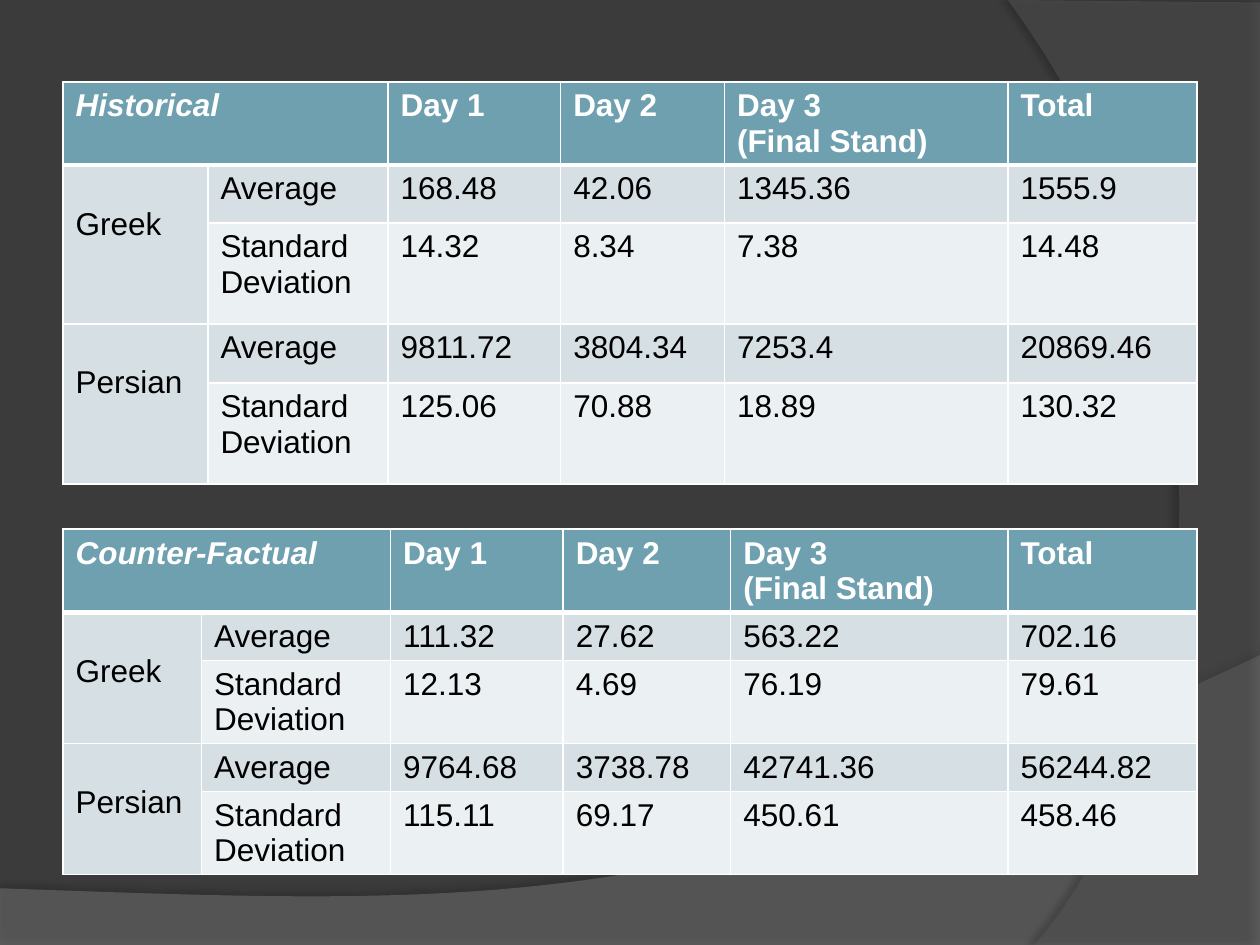
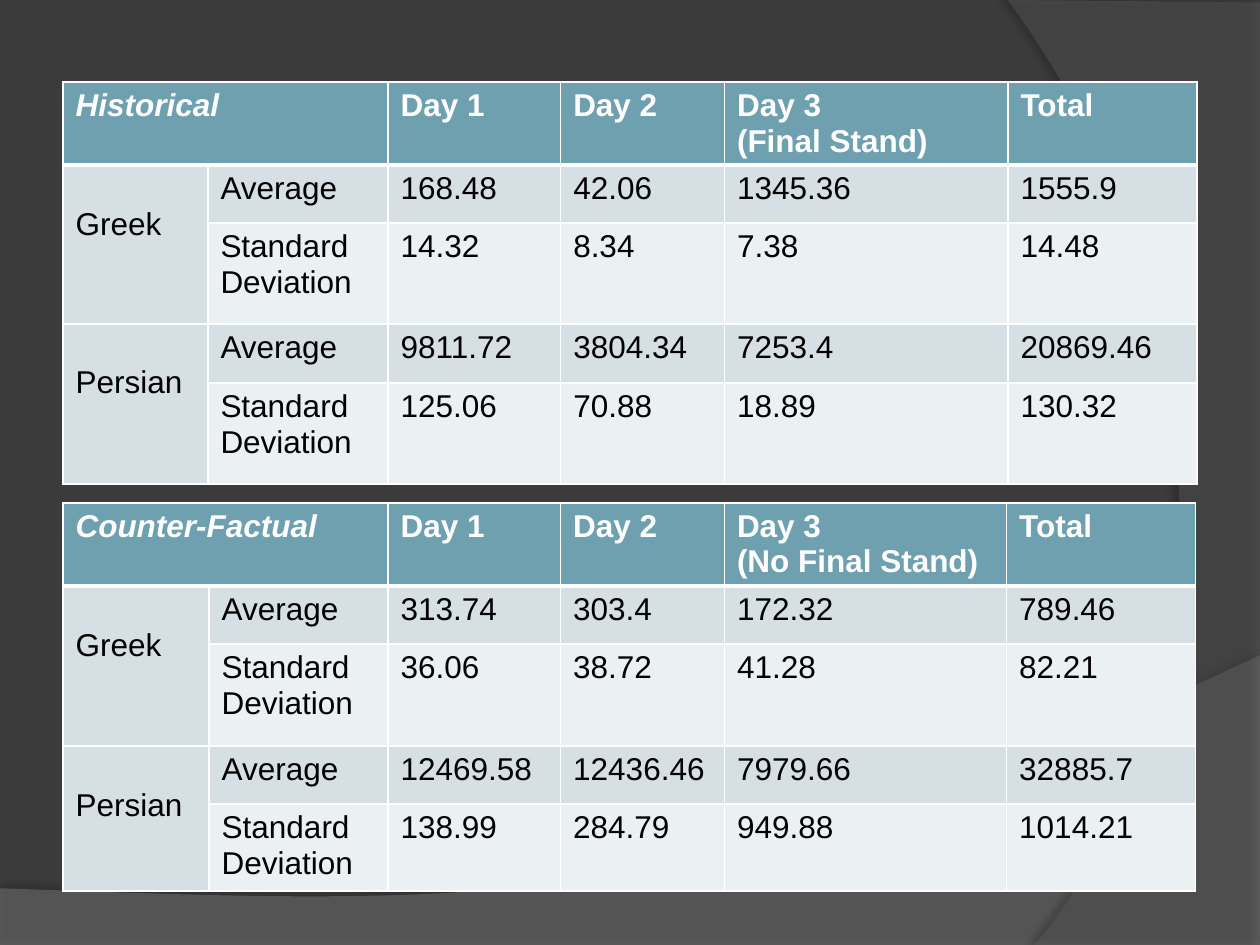
"""Build two slides of battle casualty tables on a dark, curved background."""
from lxml.etree import SubElement
from pptx import Presentation
from pptx.dml.color import RGBColor
from pptx.oxml import parse_xml
from pptx.oxml.ns import nsdecls, qn
from pptx.util import Emu, Inches, Pt

BACKDROP = RGBColor(0x3B, 0x3B, 0x3B)
LOWER_BAND = RGBColor(0x7F, 0x7F, 0x7F)
RIGHT_BAND = RGBColor(0x5E, 0x5E, 0x5E)
HEADER = RGBColor(0x6E, 0xA0, 0xB0)
DARK_ROW = RGBColor(0xD5, 0xDF, 0xE4)
LIGHT_ROW = RGBColor(0xEB, 0xF0, 0xF2)
WHITE = RGBColor(0xFF, 0xFF, 0xFF)
BLACK = RGBColor(0x00, 0x00, 0x00)

GRID_COLUMNS, GRID_ROWS = 100, 75
TABLE_LEFT = 5
DEVIATION = "Standard Deviation"
STACKED_DEVIATION = "Standard\nDeviation"

HISTORICAL = dict(
    name="Historical", final_day="(Final Stand)", top=6.5,
    columns=(11.5, 14.3, 13.7, 13, 22.5, 15), rows=(6.5, 4.6, 8, 4.7, 8),
    records=(
        ("Greek", "Average", "168.48", "42.06", "1345.36", "1555.9"),
        ("", DEVIATION, "14.32", "8.34", "7.38", "14.48"),
        ("Persian", "Average", "9811.72", "3804.34", "7253.4", "20869.46"),
        ("", DEVIATION, "125.06", "70.88", "18.89", "130.32"),
    ),
)
WITH_FINAL_STAND = dict(
    name="Counter-Factual", final_day="(Final Stand)", top=42,
    columns=(11, 15, 13.7, 13.3, 22, 15), rows=(6.5, 3.7, 6.6, 3.8, 6.6),
    records=(
        ("Greek", "Average", "111.32", "27.62", "563.22", "702.16"),
        ("", STACKED_DEVIATION, "12.13", "4.69", "76.19", "79.61"),
        ("Persian", "Average", "9764.68", "3738.78", "42741.36", "56244.82"),
        ("", DEVIATION, "115.11", "69.17", "450.61", "458.46"),
    ),
)
NO_FINAL_STAND = dict(
    name="Counter-Factual", final_day="(No Final Stand)", top=39.9,
    columns=(11.6, 14.2, 13.7, 13, 22.4, 15), rows=(6.5, 4.6, 8.1, 4.6, 6.9),
    records=(
        ("Greek", "Average", "313.74", "303.4", "172.32", "789.46"),
        ("", DEVIATION, "36.06", "38.72", "41.28", "82.21"),
        ("Persian", "Average", "12469.58", "12436.46", "7979.66", "32885.7"),
        ("", DEVIATION, "138.99", "284.79", "949.88", "1014.21"),
    ),
)


def bezier(start, pull, push, end, steps=40):
    """Return points along a cubic curve."""
    points = []
    for step in range(steps + 1):
        t = step / steps
        weights = ((1 - t) ** 3, 3 * t * (1 - t) ** 2, 3 * t * t * (1 - t), t ** 3)
        points.append(tuple(
            sum(weight * value for weight, value in zip(weights, axis))
            for axis in zip(start, pull, push, end)))
    return points


class CasualtyDeck:
    """Hold the shared style and the current slide."""

    font = "Arial"
    size = Pt(18)

    def __init__(self):
        self.deck = Presentation()
        self.deck.slide_width, self.deck.slide_height = Inches(10), Inches(7.5)
        self.page = None

    def across(self, columns):
        """Convert grid columns to a length."""
        return Emu(round(self.deck.slide_width * columns / GRID_COLUMNS))

    def down(self, rows):
        """Convert grid rows to a length."""
        return Emu(round(self.deck.slide_height * rows / GRID_ROWS))

    def add_page(self):
        """Start a slide with the shared backdrop and curved bands."""
        self.page = self.deck.slides.add_slide(self.deck.slide_layouts[6])
        fill = self.page.background.fill
        fill.solid()
        fill.fore_color.rgb = BACKDROP
        lower_curve = bezier((100, 52), (55.9, 72.9), (39.1, 71.9), (0, 70.5))
        self.add_band([*lower_curve, (0, 75), (100, 75)], LOWER_BAND, 45,
                      shadow=(35, 3.5, 270))
        right_curve = bezier((82.1, 75), (93.5, 61.9), (101.8, 30), (80, 0))
        self.add_band([*right_curve, (100, 0.2), (100, 75)], RIGHT_BAND, 40,
                      shadow=(45, 4, 180))

    def add_band(self, points, color, opacity, shadow):
        """Draw a translucent outline with a soft shadow."""
        outline = [(self.across(x), self.down(y)) for x, y in points]
        builder = self.page.shapes.build_freeform(*outline[0], scale=1.0)
        builder.add_line_segments(outline[1:], close=True)
        band = builder.convert_to_shape()
        band.fill.solid()
        band.fill.fore_color.rgb = color
        band.line.fill.background()
        properties = band._element.spPr
        tint = properties.find(qn("a:solidFill")).find(qn("a:srgbClr"))
        SubElement(tint, qn("a:alpha"), val=str(opacity * 1000))
        strength, distance, angle = shadow
        properties.append(parse_xml(
            f'<a:effectLst {nsdecls("a")}><a:outerShdw blurRad="{Pt(4)}" '
            f'dist="{Pt(distance)}" dir="{angle * 60000}" rotWithShape="0">'
            f'<a:srgbClr val="{BLACK}"><a:alpha val="{strength * 1000}"/>'
            '</a:srgbClr></a:outerShdw></a:effectLst>'))

    def add_table(self, name, final_day, top, columns, rows, records):
        """Add one table of averages and deviations by army."""
        header = (name, "", "Day 1", "Day 2", f"Day 3\n{final_day}", "Total")
        table = self.page.shapes.add_table(
            len(rows), len(columns), self.across(TABLE_LEFT), self.down(top),
            self.across(sum(columns)), self.down(sum(rows))).table
        for column, width in zip(table.columns, columns):
            column.width = self.across(width)
        for row, height in zip(table.rows, rows):
            row.height = self.down(height)
        for row, texts in enumerate((header, *records)):
            for column, text in enumerate(texts):
                cell = table.cell(row, column)
                self.rule_cell(cell, row)
                self.fill_cell(cell, row, column)
                self.write_cell(cell, text, row == 0, italic=row == column == 0)
        table.cell(0, 0).merge(table.cell(0, 1))
        for row in (1, 3):
            army = table.cell(row, 0)
            army.merge(table.cell(row + 1, 0))
            army.margin_top = self.down(3.3)

    def rule_cell(self, cell, row):
        """Draw white cell borders, thicker below the header."""
        widths = {"L": 1, "R": 1, "T": 3 if row == 1 else 1, "B": 3 if row == 0 else 1}
        properties = cell._tc.get_or_add_tcPr()
        for side, width in widths.items():
            line = SubElement(properties, qn(f"a:ln{side}"), w=str(Pt(width)))
            fill = SubElement(line, qn("a:solidFill"))
            SubElement(fill, qn("a:srgbClr"), val=str(WHITE))

    def fill_cell(self, cell, row, column):
        """Colour a cell by header, army column or row band."""
        cell.fill.solid()
        if row == 0:
            cell.fill.fore_color.rgb = HEADER
        else:
            dark = column == 0 or row % 2
            cell.fill.fore_color.rgb = DARK_ROW if dark else LIGHT_ROW

    def write_cell(self, cell, text, heading, italic):
        """Write each line of a cell as a paragraph."""
        if not text:
            return
        frame = cell.text_frame
        for number, line in enumerate(text.split("\n")):
            para = frame.add_paragraph() if number else frame.paragraphs[0]
            span = para.add_run()
            span.text = line
            span.font.name, span.font.size = self.font, self.size
            span.font.bold, span.font.italic = heading, italic
            span.font.color.rgb = WHITE if heading else BLACK


def main():
    """Build and save the slides."""
    casualties = CasualtyDeck()
    for alternative in (WITH_FINAL_STAND, NO_FINAL_STAND):
        casualties.add_page()
        casualties.add_table(**alternative)
        casualties.add_table(**HISTORICAL)
    casualties.deck.save("out.pptx")


if __name__ == "__main__":
    main()
